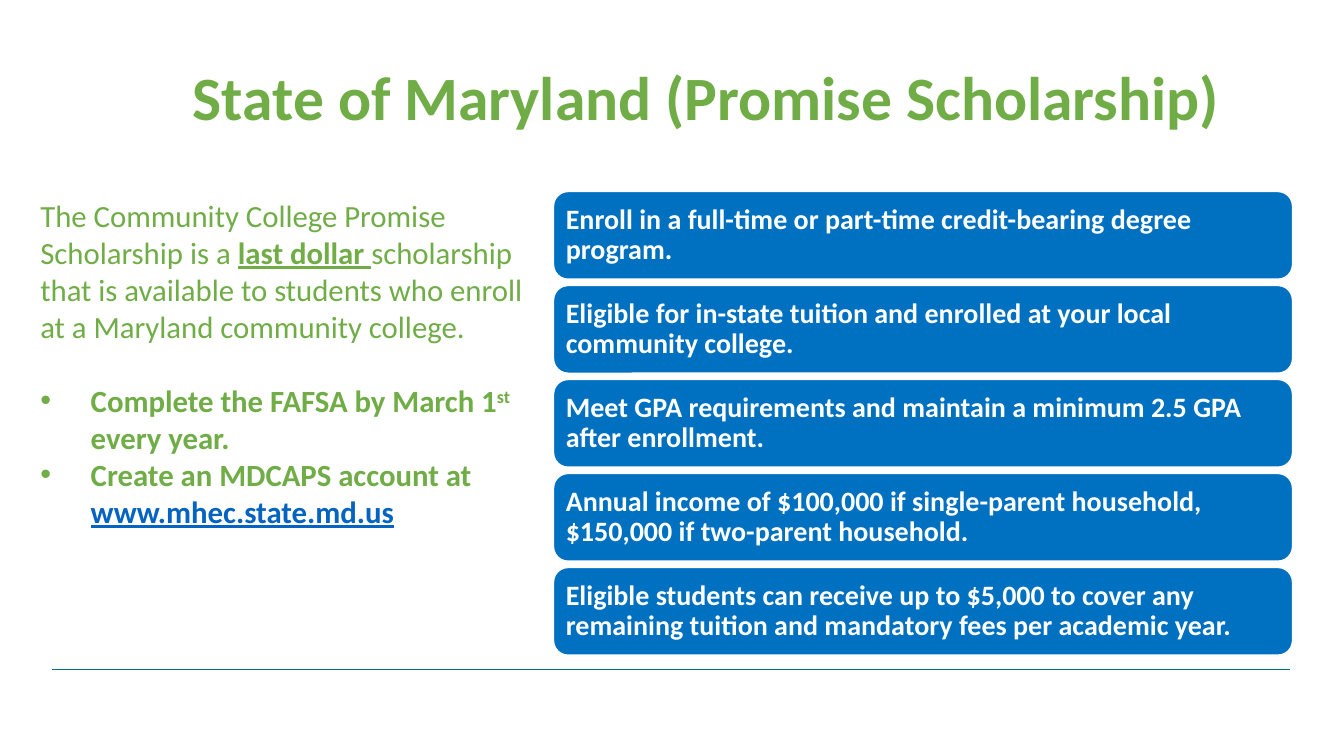
from dataclasses import dataclass

from lxml.etree import SubElement
from pptx import Presentation
from pptx.dml.color import RGBColor as Color
from pptx.enum.shapes import MSO_CONNECTOR as Connector, MSO_SHAPE as Shape
from pptx.enum.text import MSO_ANCHOR as Anchor, MSO_AUTO_SIZE as AutoSize, PP_ALIGN as Align
from pptx.oxml.ns import qn
from pptx.util import Inches, Pt


@dataclass(frozen=True)
class Theme:
    font: str = "Calibri"
    green: Color = Color(0x70, 0xAD, 0x47)
    blue: Color = Color(0x00, 0x70, 0xC0)
    link: Color = Color(0x05, 0x63, 0xC1)
    teal: Color = Color(0x00, 0x75, 0x82)
    white: Color = Color(0xFF, 0xFF, 0xFF)
    title_size: Pt = Pt(44)
    body_size: Pt = Pt(22)
    card_size: Pt = Pt(20)


THEME = Theme()

TITLE = "State of Maryland (Promise Scholarship)"
REQUIREMENTS = [
    "Enroll in a full-time or part-time credit-bearing degree program.",
    "Eligible for in-state tuition and enrolled at your local community college.",
    "Meet GPA requirements and maintain a minimum 2.5 GPA after enrollment.",
    "Annual income of $100,000 if single-parent household, $150,000 if two-parent household.",
    "Eligible students can receive up to $5,000 to cover any remaining tuition and mandatory fees per academic year.",
]


def add_run(paragraph, text, size, color, bold=False, underline=False):
    run = paragraph.add_run()
    run.text = text
    font = run.font
    font.name, font.size, font.bold, font.underline = THEME.font, size, bold, underline
    font.color.rgb = color
    return run


def place(shape, left, top, width, height):
    shape.left, shape.top = Inches(left), Inches(top)
    shape.width, shape.height = Inches(width), Inches(height)


def set_bullet(paragraph, character=None):
    properties = paragraph._p.get_or_add_pPr()
    indent = Inches(0.5) if character else 0
    properties.set("marL", str(indent))
    properties.set("indent", str(-indent))
    if character:
        SubElement(properties, qn("a:buFont"), typeface="Arial")
        SubElement(properties, qn("a:buChar"), char=character)
    else:
        SubElement(properties, qn("a:buNone"))


def fill_title(title, left, top, width, height):
    place(title, left, top, width, height)
    frame = title.text_frame
    frame.auto_size = AutoSize.NONE
    frame.vertical_anchor = Anchor.TOP
    paragraph = frame.paragraphs[0]
    paragraph.alignment = Align.CENTER
    paragraph.line_spacing = 0.9
    add_run(paragraph, TITLE, THEME.title_size, THEME.green, bold=True)


def fill_overview(body, left, top, width, height):
    place(body, left, top, width, height)
    frame = body.text_frame
    frame.auto_size = AutoSize.NONE
    frame.vertical_anchor = Anchor.TOP
    size, green = THEME.body_size, THEME.green

    intro = frame.paragraphs[0]
    set_bullet(intro)
    add_run(intro, "The Community College Promise Scholarship is a ", size, green)
    add_run(intro, "last dollar ", size, green, bold=True, underline=True)
    add_run(intro, "scholarship that is available to students who enroll at a Maryland community college.", size, green)

    deadline = frame.add_paragraph()
    set_bullet(deadline, "•")
    add_run(deadline, "Complete the FAFSA by March 1", size, green, bold=True)
    ordinal = add_run(deadline, "st", size, green, bold=True)
    ordinal._r.get_or_add_rPr().set("baseline", "30000")
    add_run(deadline, " every year.", size, green, bold=True)

    account = frame.add_paragraph()
    set_bullet(account, "•")
    add_run(account, "Create an MDCAPS account at ", size, green, bold=True)
    add_run(account, "www.mhec.state.md.us", size, THEME.link, bold=True, underline=True)

    for paragraph in frame.paragraphs:
        paragraph.space_before = Pt(0)
        paragraph.font.size = size
        paragraph.font.color.rgb = green
    deadline.space_before = Pt(26.5)


def add_card(slide, text, left, top, width, height):
    card = slide.shapes.add_shape(
        Shape.ROUNDED_RECTANGLE, Inches(left), Inches(top), Inches(width), Inches(height)
    )
    card.shadow.inherit = False
    card.fill.solid()
    card.fill.fore_color.rgb = THEME.blue
    card.line.color.rgb = THEME.white
    card.line.width = Pt(1)
    frame = card.text_frame
    frame.word_wrap = True
    frame.vertical_anchor = Anchor.MIDDLE
    frame.margin_left = frame.margin_right = Inches(0.08)
    frame.margin_top = frame.margin_bottom = Inches(0.08)
    paragraph = frame.paragraphs[0]
    paragraph.alignment = Align.LEFT
    paragraph.line_spacing = 0.9
    add_run(paragraph, text, THEME.card_size, THEME.white, bold=True)


def add_requirements(slide, left, top, width, height):
    card_height = 0.87
    pitch = (height - card_height) / (len(REQUIREMENTS) - 1)
    for index, text in enumerate(REQUIREMENTS):
        add_card(slide, text, left, top + index * pitch, width, card_height)


def add_footer_rule(slide, left, top, width):
    rule = slide.shapes.add_connector(
        Connector.STRAIGHT, Inches(left), Inches(top), Inches(left + width), Inches(top)
    )
    rule.line.color.rgb = THEME.teal
    rule.line.width = Pt(1)
    SubElement(rule._element.spPr, qn("a:effectLst"))


def main():
    presentation = Presentation()
    presentation.slide_width, presentation.slide_height = Inches(13.33), Inches(7.5)
    slide = presentation.slides.add_slide(presentation.slide_layouts[1])
    add_footer_rule(slide, 0.52, 6.64, 12.27)
    fill_title(slide.shapes.title, 1.7, 0.62, 10.62, 0.96)
    fill_overview(slide.placeholders[1], 0.3, 1.9, 5.05, 4.04)
    add_requirements(slide, 5.49, 1.9, 7.33, 4.6)
    presentation.save("out.pptx")


if __name__ == "__main__":
    main()
